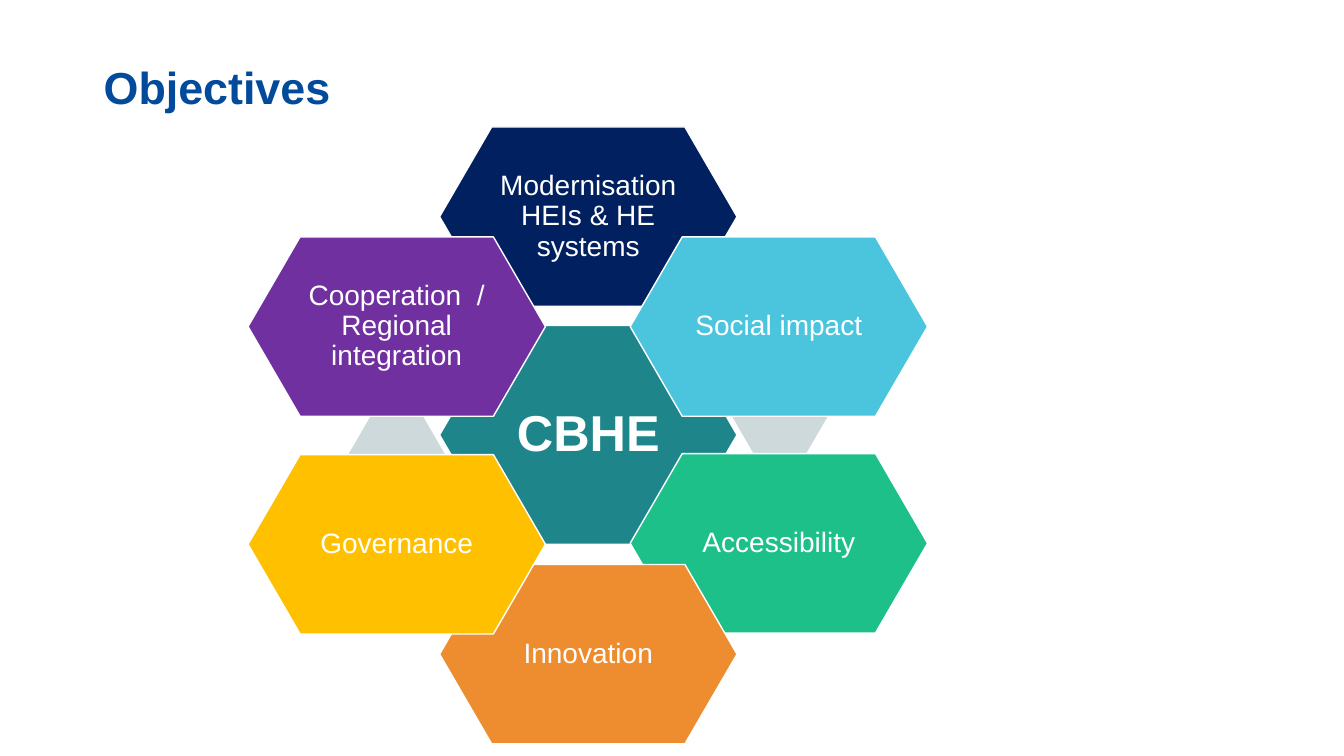
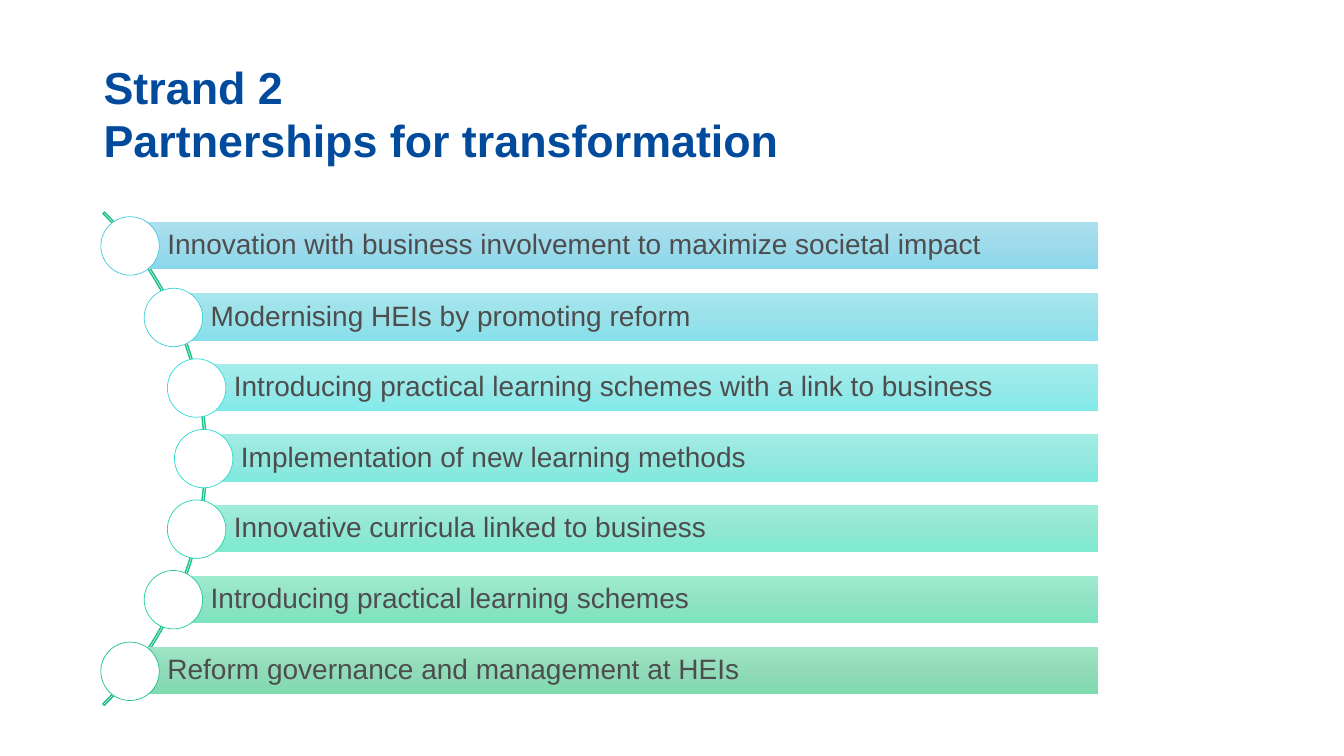
from copy import deepcopy
from dataclasses import dataclass
from math import sqrt

from pptx import Presentation
from pptx.dml.color import RGBColor
from pptx.enum.shapes import MSO_SHAPE
from pptx.enum.text import MSO_ANCHOR, PP_ALIGN
from pptx.oxml.ns import qn
from pptx.shapes.autoshape import Shape
from pptx.slide import Slide
from pptx.util import Emu, Pt

PX = 9144
FONT = "Arial"
WHITE = "FFFFFF"
BLUE = "024B9C"
GREEN = "1EC08A"
GREY = "CDD9DA"
TEAL = "1E858B"
INK = "4D4D4D"


@dataclass(frozen=True)
class Box:
    left: int
    top: int
    width: int
    height: int

    def scaled(self) -> list[Emu]:
        return [Emu(n * PX) for n in (self.left, self.top, self.width, self.height)]


@dataclass(frozen=True)
class Petal:
    left: int
    top: int
    fill: str
    text: str


@dataclass(frozen=True)
class Step:
    text: str
    line: str
    stops: tuple[str, str, str]


PETALS = (
    Petal(436, 126, "002060", "Modernisation HEIs & HE systems"),
    Petal(625, 235, "4BC5DE", "Social impact"),
    Petal(625, 450, GREEN, "Accessibility"),
    Petal(436, 560, "ED8D2F", "Innovation"),
    Petal(246, 451, "FFC000", "Governance"),
    Petal(246, 235, "7030A0", "Cooperation  / Regional integration"),
)

STEPS = (
    Step("Innovation with business involvement to maximize societal impact",
         "4BC5DE", ("ACE0EE", "9DDAEB", "8BD8EB")),
    Step("Modernising HEIs by promoting reform",
         "40CFDD", ("A8E6EE", "9AE1EA", "87E0EB")),
    Step("Introducing practical learning schemes with a link to business",
         "34DBDC", ("A5EDED", "97E9E9", "83EAEA")),
    Step("Implementation of new learning methods",
         "29DBCC", ("A2ECE4", "94E8DF", "80EADE")),
    Step("Innovative curricula linked to business",
         "23D4B7", ("A0ECDA", "92E8D3", "7EE9D0")),
    Step("Introducing practical learning schemes",
         "20CAA0", ("9FEBCF", "92E3C5", "7DE3BF")),
    Step("Reform governance and management at HEIs",
         GREEN, ("9EE6C3", "91DBB8", "7DDBAF")),
)


def tint(code: str) -> RGBColor:
    return RGBColor.from_string(code)


def style(shape: Shape, size: int, ink: str, bold: bool = False) -> None:
    for para in shape.text_frame.paragraphs:
        for run in para.runs:
            run.font.name = FONT
            run.font.size = Pt(size)
            run.font.bold = bold
            run.font.color.rgb = tint(ink)


def title(slide: Slide, text: str) -> None:
    box = slide.shapes.add_textbox(*Box(93, 54, 954, 84).scaled())
    box.text_frame.word_wrap = True
    box.text_frame.text = text
    style(box, 32, BLUE, True)


def draw(slide: Slide, kind: MSO_SHAPE, box: Box, fill: str | None = None,
         line: str | None = None, weight: float = 1) -> Shape:
    shape = slide.shapes.add_shape(kind, *box.scaled())
    shape.shadow.inherit = False
    if fill:
        shape.fill.solid()
        shape.fill.fore_color.rgb = tint(fill)
    else:
        shape.fill.background()
    if line:
        shape.line.color.rgb = tint(line)
        shape.line.width = Pt(weight)
    else:
        shape.line.fill.background()
    return shape


def label(shape: Shape, text: str, align: PP_ALIGN, left: int, pad: int) -> None:
    frame = shape.text_frame
    frame.text = text
    frame.word_wrap = True
    frame.vertical_anchor = MSO_ANCHOR.MIDDLE
    frame.margin_left = Emu(left * PX)
    frame.margin_right = frame.margin_top = frame.margin_bottom = Emu(pad * PX)
    frame.paragraphs[0].alignment = align
    frame.paragraphs[0].line_spacing = 0.9


def blend(shape: Shape, codes: tuple[str, str, str]) -> None:
    shape.fill.gradient()
    shape.fill.gradient_angle = 270
    stops = shape.element.spPr.find(".//" + qn("a:gsLst"))
    stops.append(deepcopy(stops[-1]))
    for i, (stop, code) in enumerate(zip(shape.fill.gradient_stops, codes)):
        stop.position = i / 2
        stop.color.rgb = tint(code)


def hexa(slide: Slide, box: Box, fill: str, line: str | None = None) -> Shape:
    shape = draw(slide, MSO_SHAPE.HEXAGON, box, fill, line)
    shape.adjustments[0] = 0.29
    return shape


def cluster(slide: Slide) -> None:
    title(slide, "Objectives")
    core = hexa(slide, Box(436, 323, 295, 217), TEAL, WHITE)
    core.adjustments[0] = 0.24
    label(core, "CBHE", PP_ALIGN.CENTER, 5, 5)
    style(core, 36, WHITE, True)
    for left, top in ((726, 372), (346, 409)):
        hexa(slide, Box(left, top, 95, 82), GREY)
    for petal in PETALS:
        shape = hexa(slide, Box(petal.left, petal.top, 295, 178), petal.fill, WHITE)
        label(shape, petal.text, PP_ALIGN.CENTER, 3, 3)
        style(shape, 20, WHITE)
    core.adjustments[0] = 0.29


def ladder(slide: Slide) -> None:
    mid_x, mid_y, reach, right = -141, 455, 343, 1089
    arc = draw(slide, MSO_SHAPE.BLOCK_ARC, Box(-487, 109, 692, 692), line=GREEN)
    for i, value in enumerate((189, 27, 0.0031)):
        arc.adjustments[i] = value
    for i, step in enumerate(STEPS):
        rise = round(70.2 * (i - len(STEPS) // 2))
        x = mid_x + round(sqrt(reach ** 2 - rise ** 2))
        y = mid_y + rise
        bar = draw(slide, MSO_SHAPE.RECTANGLE, Box(x, y - 24, right - x, 47))
        blend(bar, step.stops)
        label(bar, step.text, PP_ALIGN.LEFT, 37, 6)
        style(bar, 20, INK)
        draw(slide, MSO_SHAPE.OVAL, Box(x - 29, y - 29, 58, 58), WHITE, step.line, 0.5)
    title(slide, "Strand 2\nPartnerships for transformation")


def main() -> None:
    deck = Presentation()
    deck.slide_width = Emu(1333 * PX)
    deck.slide_height = Emu(750 * PX)
    for build in (cluster, ladder):
        build(deck.slides.add_slide(deck.slide_layouts[6]))
    deck.save("out.pptx")


if __name__ == "__main__":
    main()
